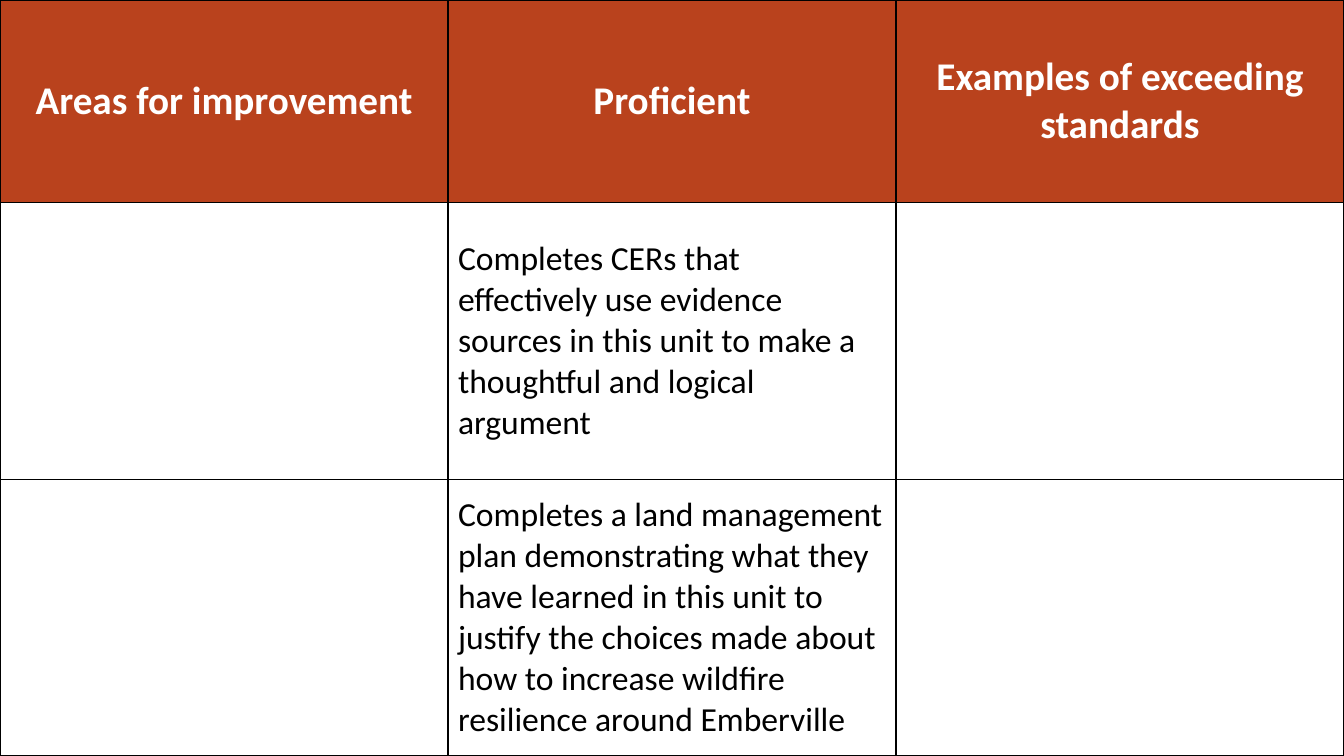
from pptx import Presentation
from pptx.dml.color import RGBColor
from pptx.enum.text import MSO_ANCHOR, PP_ALIGN
from pptx.oxml import parse_xml
from pptx.oxml.ns import nsdecls
from pptx.util import Pt

COLORS = {"rust": "B9421D", "white": "FFFFFF", "black": "000000"}
WIDTH, HEIGHT = 960, 540
HEAD = 144.8

ROWS = [
    ["Areas for improvement", "Proficient", "Examples of exceeding standards"],
    ["", "Completes CERs that effectively use evidence sources in this unit "
         "to make a thoughtful and logical argument", ""],
    ["", "Completes a land management plan demonstrating what they have "
         "learned in this unit to justify the choices made about how to "
         "increase wildfire resilience around Emberville", ""],
]


def add_edges(cell):
    props = cell._tc.get_or_add_tcPr()
    for side in ("lnL", "lnR", "lnT", "lnB"):
        props.append(parse_xml(
            f'<a:{side} {nsdecls("a")} w="{Pt(1)}"><a:solidFill>'
            f'<a:srgbClr val="{COLORS["black"]}"/></a:solidFill></a:{side}>'))


# Slide
deck = Presentation()
deck.slide_width, deck.slide_height = Pt(WIDTH), Pt(HEIGHT)
slide = deck.slides.add_slide(deck.slide_layouts[6])

# Full-slide rubric table
rubric = slide.shapes.add_table(
    len(ROWS), len(ROWS[0]), Pt(0), Pt(0), Pt(WIDTH), Pt(HEIGHT)).table
for col in rubric.columns:
    col.width = Pt(WIDTH / len(ROWS[0]))
for r, row in enumerate(rubric.rows):
    row.height = Pt(HEAD if r == 0 else (HEIGHT - HEAD) / (len(ROWS) - 1))

# Cells: bold white headings on rust, black criteria on white
for r, texts in enumerate(ROWS):
    top = r == 0
    for c, text in enumerate(texts):
        cell = rubric.cell(r, c)
        add_edges(cell)
        cell.fill.solid()
        cell.fill.fore_color.rgb = RGBColor.from_string(
            COLORS["rust" if top else "white"])
        cell.vertical_anchor = MSO_ANCHOR.MIDDLE
        cell.text_frame.text = text
        para = cell.text_frame.paragraphs[0]
        para.alignment = PP_ALIGN.CENTER if top else PP_ALIGN.LEFT
        for run in para.runs:
            run.font.name = "Calibri"
            run.font.size = Pt(28 if top else 24)
            run.font.bold = top
            run.font.color.rgb = RGBColor.from_string(
                COLORS["white" if top else "black"])

deck.save("out.pptx")
